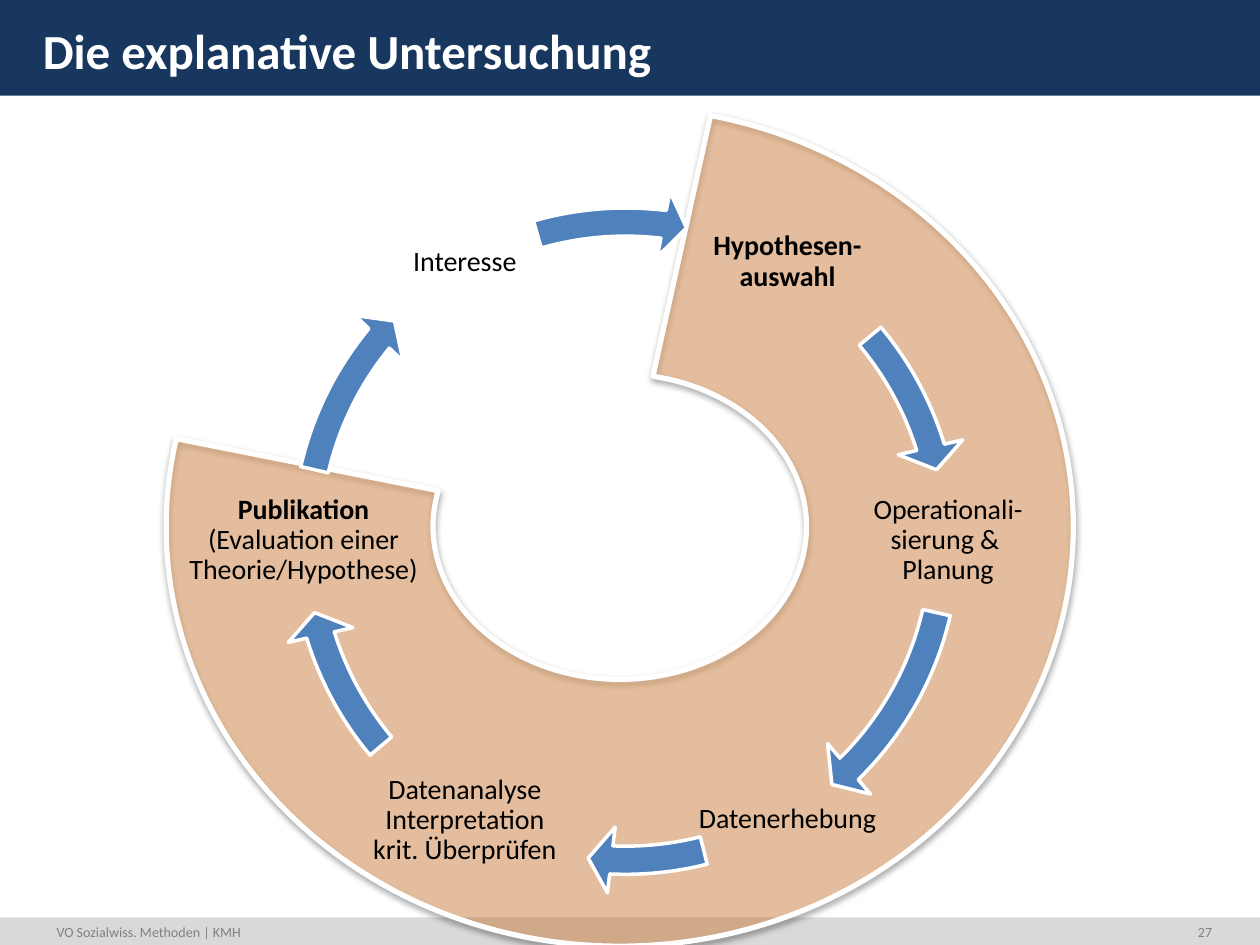
from dataclasses import dataclass

from lxml.etree import SubElement
from pptx import Presentation
from pptx.dml.color import RGBColor
from pptx.enum.shapes import MSO_SHAPE
from pptx.enum.text import MSO_ANCHOR, PP_ALIGN
from pptx.oxml.ns import qn
from pptx.util import Pt

NAVY, BLUE, ORANGE = "17375E", "4F81BD", "F79646"
WHITE, BLACK, GREY, PALE = "FFFFFF", "000000", "808080", "D9D9D9"
Box = tuple[float, float, float, float]
RING: Box = (156.2, 108, 402.5, 402.5)


@dataclass
class Step:
    box: Box
    arrow_end: float  # degrees, clockwise from three o'clock
    arrow_start: float
    plain: str = ""
    bold: str = ""


STEPS = [
    Step((393.1, 108.7, 113.8, 82.1), 342.9, 320.05, bold="Hypothesen-auswahl"),
    Step((452.9, 267.8, 177.8, 82.1), 45.53, 12.94,
         "Operationali-\nsierung & \nPlanung"),
    Step((388.1, 449.3, 123.8, 38.2), 92.55, 75.8, "Datenerhebung"),
    Step((195.1, 427.7, 141.1, 82.1), 162.9, 140.05,
         "Datenanalyse Interpretation\nkrit. Überprüfen"),
    Step((80.6, 267.8, 185.8, 82.1), 219.46, 192.94,
         "(Evaluation einer\nTheorie/Hypothese)", "Publikation"),
    Step((224.6, 108.7, 82.1, 82.1), 276.86, 253.97, "Interesse"),
]


def rgb(value: str) -> RGBColor:
    return RGBColor.from_string(value)


def points(box: Box) -> list:
    return [Pt(v) for v in box]


def angle(degrees: float) -> float:
    """Express degrees as a preset-shape adjustment."""
    return degrees * 60000 / 100000


def add_shape(shapes, kind, box: Box, fill: str, line_width: float = 0, adj=()):
    sp = shapes.add_shape(kind, *points(box))
    sp.shadow.inherit = False
    sp.fill.solid()
    sp.fill.fore_color.rgb = rgb(fill)
    if line_width:
        sp.line.color.rgb = rgb(WHITE)
        sp.line.width = Pt(line_width)
    else:
        sp.line.fill.background()
    for i, value in enumerate(adj):
        sp.adjustments[i] = value
    return sp


def add_run(p, text: str, size: float, color: str, bold: bool = False) -> None:
    r = p.add_run()
    r.text = text
    for name, value in {"name": "Calibri", "size": Pt(size), "bold": bold}.items():
        setattr(r.font, name, value)
    r.font.color.rgb = rgb(color)


def add_footer(s, box: Box, text: str, align: PP_ALIGN) -> None:
    tf = s.shapes.add_textbox(*points(box)).text_frame
    tf.word_wrap = True
    tf.paragraphs[0].alignment = align
    add_run(tf.paragraphs[0], text, 8, GREY)


def add_cycle_band(s) -> None:
    """Draw the translucent band that links all steps but the first interest."""
    sp = add_shape(s.shapes, MSO_SHAPE.BLOCK_ARC, (95, 61.2, 518.4, 479.5), ORANGE, 3,
                   (angle(282.45), angle(191.22), 0.318))
    fill = sp.element.spPr.find(qn("a:solidFill"))
    SubElement(fill[0], qn("a:alpha"), val="40000")
    effects = sp.element.spPr.find(qn("a:effectLst"))
    shadow = SubElement(effects, qn("a:outerShdw"), blurRad=str(Pt(3.1)),
                        dist=str(Pt(1.6)), dir="5400000", rotWithShape="0")
    color = SubElement(shadow, qn("a:srgbClr"), val=BLACK)
    SubElement(color, qn("a:alpha"), val="38000")


def add_step(shapes, step: Step) -> None:
    tf = shapes.add_textbox(*points(step.box)).text_frame
    margins = {f"margin_{side}": Pt(1.6) for side in ("left", "top", "right", "bottom")}
    settings = {"word_wrap": True, "vertical_anchor": MSO_ANCHOR.MIDDLE, **margins}
    for name, value in settings.items():
        setattr(tf, name, value)
    p = tf.paragraphs[0]
    p.alignment = PP_ALIGN.CENTER
    p.line_spacing = 0.9
    lines = [(step.bold, True)] if step.bold else []
    lines += [(line, False) for line in step.plain.splitlines()]
    for i, (line, bold) in enumerate(lines):
        if i:
            p.add_line_break()
        add_run(p, line, 16, BLACK, bold)
    add_shape(shapes, MSO_SHAPE.CIRCULAR_ARROW, RING, BLUE, 2,
              (0.04, 2.5, angle(step.arrow_end), angle(step.arrow_start), 0.047))


def add_title(s, text: str) -> None:
    title = s.shapes.title
    title.element.getparent().append(title.element)  # bring in front of the bar
    title.left, title.top, title.width, title.height = points((17.3, 7.2, 679.7, 36))
    tf = title.text_frame
    tf.vertical_anchor = MSO_ANCHOR.TOP
    tf.margin_top = Pt(4.5)
    p = tf.paragraphs[0]
    p.alignment = PP_ALIGN.LEFT
    add_run(p, text, 28, WHITE, True)


def main() -> None:
    prs = Presentation()
    prs.slide_width, prs.slide_height = Pt(720), Pt(540)
    s = prs.slides.add_slide(prs.slide_layouts[5])
    add_shape(s.shapes, MSO_SHAPE.RECTANGLE, (0, 524.2, 720, 15.8), PALE)
    add_shape(s.shapes, MSO_SHAPE.RECTANGLE, (0, 0, 720, 54.7), NAVY)
    add_footer(s, (25.2, 524.2, 215.3, 17.3), "VO Sozialwiss. Methoden | KMH", PP_ALIGN.LEFT)
    add_footer(s, (669.6, 524.2, 30.2, 17.3), "27", PP_ALIGN.RIGHT)
    add_cycle_band(s)
    add_title(s, "Die explanative Untersuchung")
    cycle = s.shapes.add_group_shape()
    for step in STEPS:
        add_step(cycle.shapes, step)
    prs.save("out.pptx")


if __name__ == "__main__":
    main()
